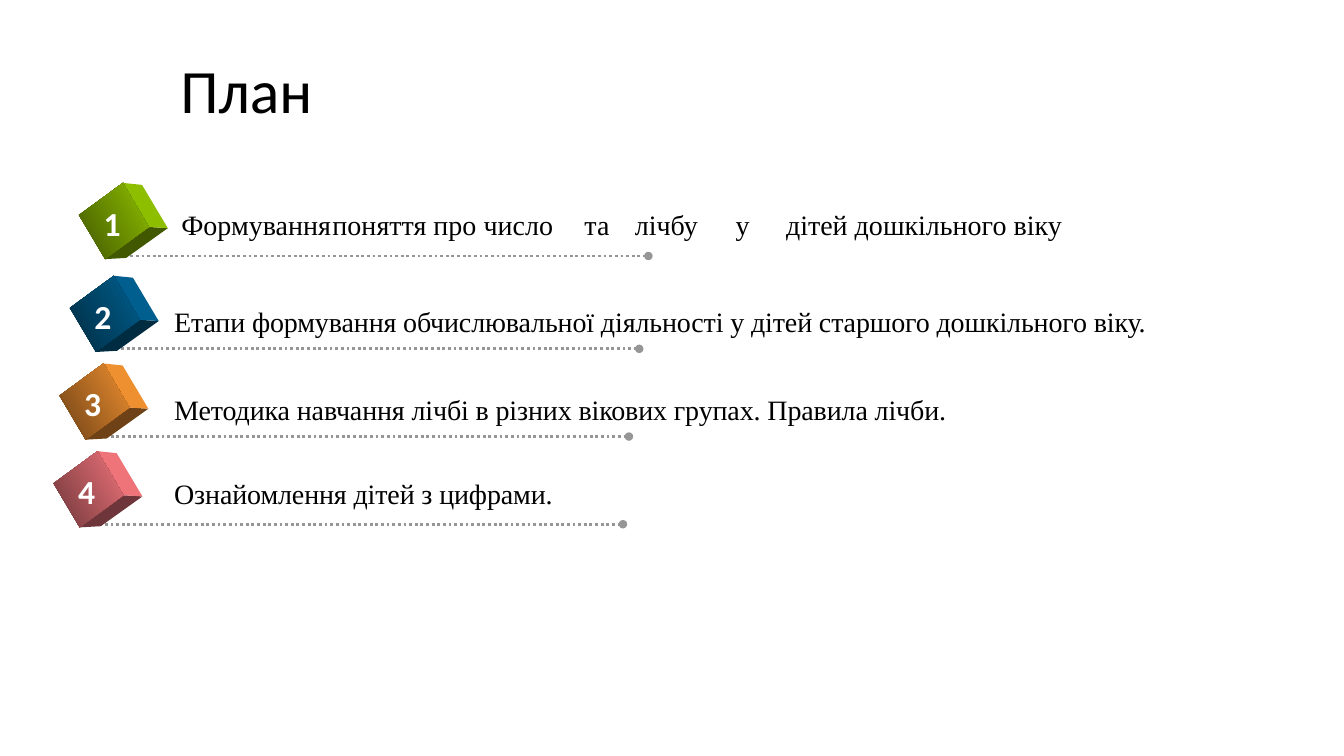
"""Build the plan slide: a title and four numbered cubes with dotted rules."""
from lxml.etree import SubElement as Sub
from pptx import Presentation
from pptx.dml.color import RGBColor as Rgb
from pptx.enum.dml import MSO_LINE as Dash
from pptx.enum.shapes import MSO_CONNECTOR as Link
from pptx.enum.text import MSO_ANCHOR as Anchor, PP_ALIGN as Align
from pptx.oxml.ns import qn
from pptx.util import Cm, Pt

HUES = {
    "ink": "000000", "white": "FFFFFF", "rule": "969696",
    "green": "8EBE00", "moss": "425800",
    "blue": "005F8E", "navy": "002C42",
    "gold": "EE8F30", "brown": "6E4216",
    "pink": "EE747A", "wine": "6E363A",
}


def write(frame, text, size=20, face="Times New Roman", hue="ink",
          bold=False, level=0, gap=1.0, space=0):
    """Fill a text frame with one formatted paragraph."""
    frame.word_wrap = True
    para = frame.paragraphs[0]
    para.alignment = Align.LEFT
    para.line_spacing = gap
    para.level = level
    if level:
        para._p.get_or_add_pPr().set("marL", str(Cm(1.27)))
    run = para.add_run()
    run.text = text
    run.font.size = Pt(size)
    run.font.name = face
    run.font.bold = bold
    run.font.color.rgb = Rgb.from_string(HUES[hue])
    if space:
        run._r.get_or_add_rPr().set("spc", str(space))


deck = Presentation()
deck.slide_width, deck.slide_height = Cm(33.87), Cm(19.05)
slide = deck.slides.add_slide(deck.slide_layouts[5])

title = slide.shapes.title
title.left, title.top, title.width, title.height = Cm(4.29), Cm(0.41), Cm(27.25), Cm(3.89)
title.text_frame.vertical_anchor = Anchor.MIDDLE
write(title.text_frame, "План", size=44, face="Calibri", gap=0.9)

left, top, right = (-1.01, -1.03), (0.1, -1.84), (1.23, -0.7)
peak, core = (0.58, -1.79), (0.75, -0.73)
base, foot = (-0.35, 0.08), (0.18, 0.05)
sides = [
    ("under", [core, right, foot, base]),
    ("side", [top, peak, right, core]),
    ("front", [left, top, core, base]),
]

body = {"level": 1, "space": -10}
rows = [
    (3.0, 6.45, "green", "moss", (4.32, 5.11, 27.94),
     "Формування\tпоняття\tпро\tчисло\tта\tлічбу\tу\tдітей дошкільного віку", {}),
    (2.77, 8.79, "blue", "navy", (2.87, 7.42, 29.06),
     "Етапи формування обчислювальної діяльності у дітей старшого дошкільного віку.",
     {**body, "gap": 1.15}),
    (2.51, 11.0, "gold", "brown", (2.87, 9.63, 23.27),
     "Методика навчання лічбі в різних вікових групах. Правила лічби.",
     {**body, "gap": 1.15}),
    (2.36, 13.21, "pink", "wine", (2.87, 11.89, 11.46),
     "Ознайомлення дітей з цифрами.", body),
]

for num, (x, y, light, dark, spot, text, form) in enumerate(rows, 1):
    group = slide.shapes.add_group_shape().shapes

    rule = group.add_connector(Link.STRAIGHT, Cm(x), Cm(y), Cm(x + 13.34), Cm(y))
    rule.line.color.rgb = Rgb.from_string(HUES["rule"])
    rule.line.width = Pt(2)
    rule.line.dash_style = Dash.ROUND_DOT
    props = rule.element.spPr
    Sub(props.find(qn("a:ln")), qn("a:tailEnd"), type="oval")
    Sub(props, qn("a:effectLst"))

    for side, spots in sides:
        points = [(Cm(x + dx), Cm(y + dy)) for dx, dy in spots]
        pen = group.build_freeform(*points[0])
        pen.add_line_segments(points[1:])
        face = pen.convert_to_shape()
        face.shadow.inherit = False
        face.line.fill.background()
        if side == "front":
            face.fill.gradient()
            face.fill.gradient_angle = 30
            for stop, hue in zip(face.fill.gradient_stops, (dark, light)):
                stop.color.rgb = Rgb.from_string(HUES[hue])
        else:
            face.fill.solid()
            face.fill.fore_color.rgb = Rgb.from_string(HUES[light if side == "side" else dark])

    start, head, width = spot
    label = group.add_textbox(Cm(start), Cm(head), Cm(width), Cm(1.12))
    write(label.text_frame, text, **form)

    digit = group.add_textbox(Cm(x - 0.64), Cm(y - 1.47), Cm(1), Cm(1.27))
    write(digit.text_frame, str(num), size=24, face="Calibri", hue="white", bold=True)

deck.save("out.pptx")
